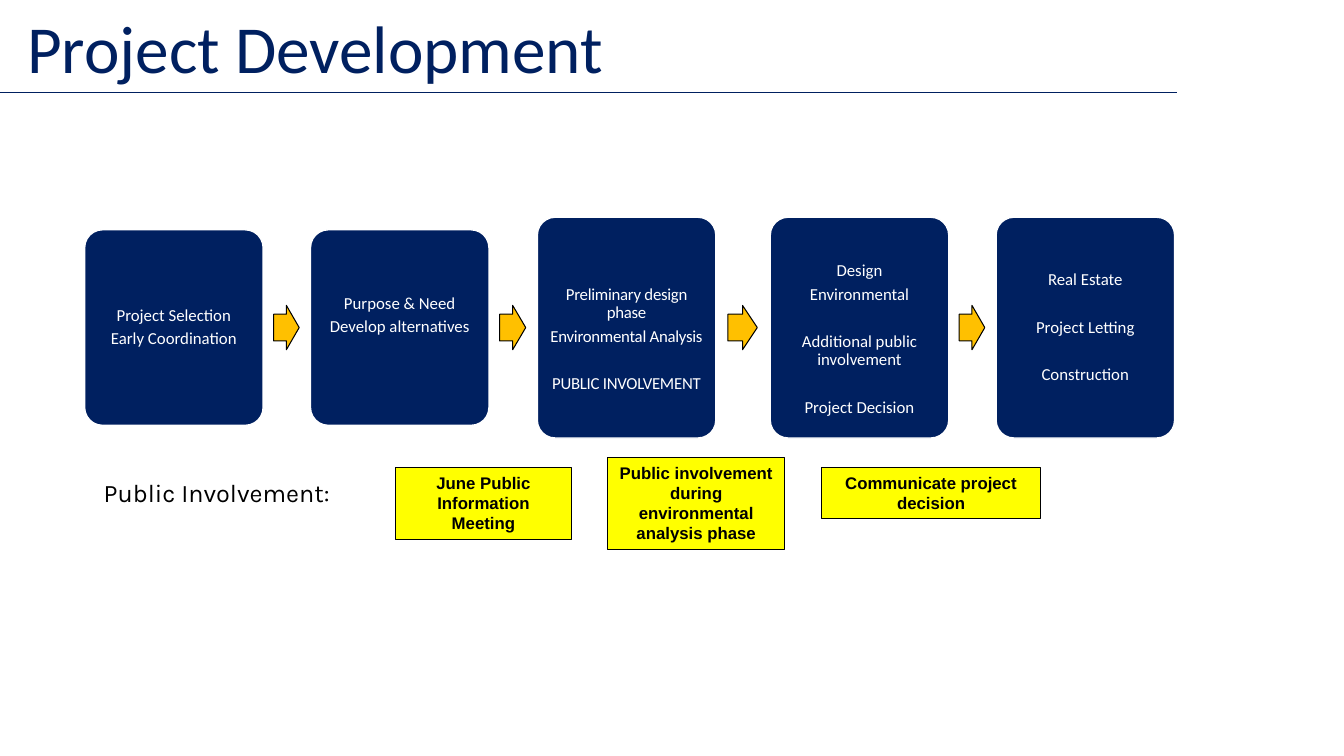
from lxml import etree
from pptx import Presentation
from pptx import util as u
from pptx.dml.color import RGBColor
from pptx.enum import shapes, text
from pptx.oxml.ns import qn

NAVY, GOLD, YELLOW, WHITE, BLACK = "002060", "FFC000", "FFFF00", "FFFFFF", "000000"
TITLE = "Project Development"
INVOLVEMENT = "Public Involvement:"
# left, height, (blank lines above, below), letter spacing, groups of lines
STEPS = [
    (0.84, 1.94, (0, 0), 0, [["Project Selection", "Early Coordination"]]),
    (3.08, 1.94, (0, 1), 0, [["Purpose & Need", "Develop alternatives"]]),
    (5.33, 2.19, (1, 0), -0.2, [["Preliminary design phase", "Environmental Analysis"],
                                ["PUBLIC INVOLVEMENT"]]),
    (7.64, 2.19, (1, 0), 0, [["Design", "Environmental"],
                             ["Additional public involvement"], ["Project Decision"]]),
    (9.88, 2.19, (0, 0), 0, [["Real Estate"], ["Project Letting"], ["Construction"]]),
]
# left, top, width, height, text
CALLOUTS = [
    (3.92, 4.64, 1.75, 0.71, "June Public Information Meeting"),
    (8.15, 4.64, 2.17, 0.5, "Communicate project decision"),
    (6.03, 4.54, 1.75, 0.91, "Public involvement during environmental analysis phase"),
]
STEP_WIDTH, STEP_MIDDLE, ARROW_HEIGHT = 1.77, 3.25, 0.44
LINE_GAP, BLANK_LINE, STEP_INSET = 4, 17, 0.05


def color(value):
    return RGBColor.from_string(value)


def write(para, words, size=12, font="Calibri", ink=WHITE, bold=False,
          align=text.PP_ALIGN.CENTER, spacing=0):
    para.alignment = align
    span = para.add_run()
    span.text = words
    span.font.size, span.font.name, span.font.bold = u.Pt(size), font, bold
    span.font.color.rgb = color(ink)
    if spacing:
        span._r.get_or_add_rPr().set("spc", str(round(spacing * 100)))


def add_box(page, kind, left, top, width, height, fill, line, weight, adjust):
    box = page.shapes.add_shape(kind, *map(u.Inches, (left, top, width, height)))
    for index, value in enumerate(adjust):
        box.adjustments[index] = value
    box.shadow.inherit = False
    box.fill.solid()
    box.fill.fore_color.rgb = color(fill)
    box.line.color.rgb = color(line)
    box.line.width = u.Pt(weight)
    box.text_frame.word_wrap = True
    return box


def add_step(page, left, height, blanks, spacing, groups):
    box = add_box(page, shapes.MSO_SHAPE.ROUNDED_RECTANGLE, left, STEP_MIDDLE - height / 2,
                  STEP_WIDTH, height, NAVY, WHITE, 1, [0.1])
    frame = box.text_frame
    frame.vertical_anchor = text.MSO_ANCHOR.MIDDLE
    frame.margin_left = frame.margin_right = u.Inches(STEP_INSET)
    frame.margin_top, frame.margin_bottom = (
        u.Inches(STEP_INSET) + u.Pt(BLANK_LINE * count) for count in blanks)
    first = True
    for group in groups:
        for index, words in enumerate(group):
            para = frame.paragraphs[0] if first else frame.add_paragraph()
            para.line_spacing = 0.9
            para.space_after = u.Pt(LINE_GAP)
            if index == 0 and not first:
                para.space_before = u.Pt(BLANK_LINE)
            write(para, words, spacing=spacing)
            first = False


def main():
    deck = Presentation()
    deck.slide_width, deck.slide_height = u.Inches(13.33), u.Inches(7.5)
    page = deck.slides.add_slide(deck.slide_layouts[5])

    rule = page.shapes.add_connector(shapes.MSO_CONNECTOR.STRAIGHT, 0, u.Inches(0.92),
                                     u.Inches(11.67), u.Inches(0.92))
    rule.line.color.rgb = color(NAVY)
    rule.line.width = u.Pt(0.5)
    etree.SubElement(rule._element.spPr, qn("a:effectLst"))

    title = page.shapes.title
    title.left, title.top, title.width, title.height = map(u.Inches, (0.17, 0, 13, 0.92))
    title.text_frame.vertical_anchor = text.MSO_ANCHOR.BOTTOM
    title.text_frame.auto_size = text.MSO_AUTO_SIZE.NONE
    heading = title.text_frame.paragraphs[0]
    heading.line_spacing = 0.9
    write(heading, TITLE, size=48, ink=NAVY, align=text.PP_ALIGN.LEFT)

    for step in STEPS:
        add_step(page, *step)
    for before, after in zip(STEPS, STEPS[1:]):
        start = before[0] + STEP_WIDTH
        gap = after[0] - start
        add_box(page, shapes.MSO_SHAPE.RIGHT_ARROW, start + 0.22 * gap,
                STEP_MIDDLE - ARROW_HEIGHT / 2, 0.54 * gap, ARROW_HEIGHT,
                GOLD, BLACK, 0.75, [0.6, 0.5])

    for left, top, width, height, words in CALLOUTS:
        box = add_box(page, shapes.MSO_SHAPE.UP_ARROW_CALLOUT, left, top, width, height,
                      YELLOW, BLACK, 0.75, [0.23, 0, 0, 1])
        box.text_frame.vertical_anchor = text.MSO_ANCHOR.TOP
        write(box.text_frame.paragraphs[0], words, font="Arial", ink=BLACK, bold=True)

    label = page.shapes.add_textbox(*map(u.Inches, (0.93, 4.69, 2.5, 0.4)))
    label.text_frame.word_wrap = True
    write(label.text_frame.paragraphs[0], INVOLVEMENT, size=18, font="Karla", ink=BLACK,
          align=text.PP_ALIGN.LEFT)

    deck.save("out.pptx")


if __name__ == "__main__":
    main()
